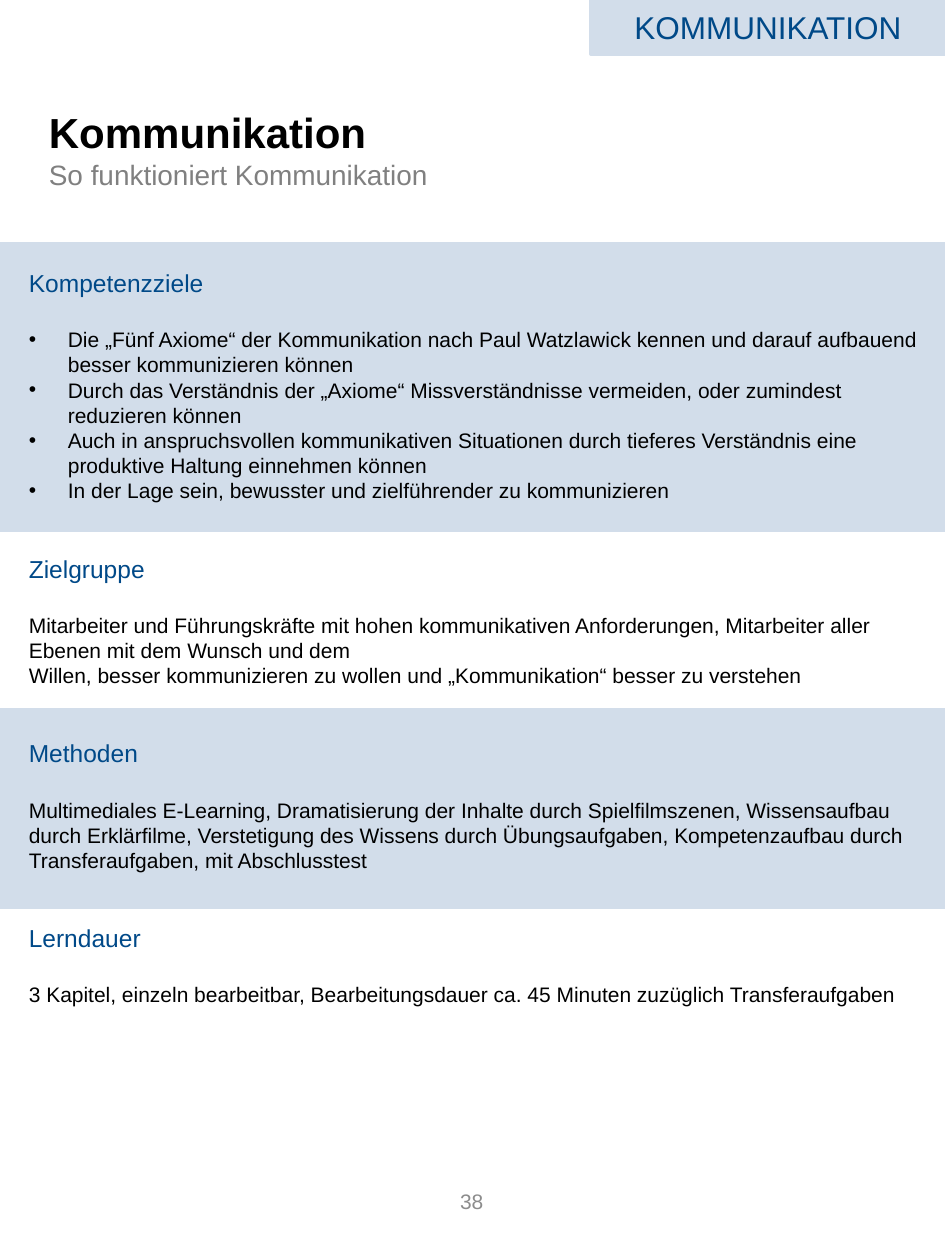
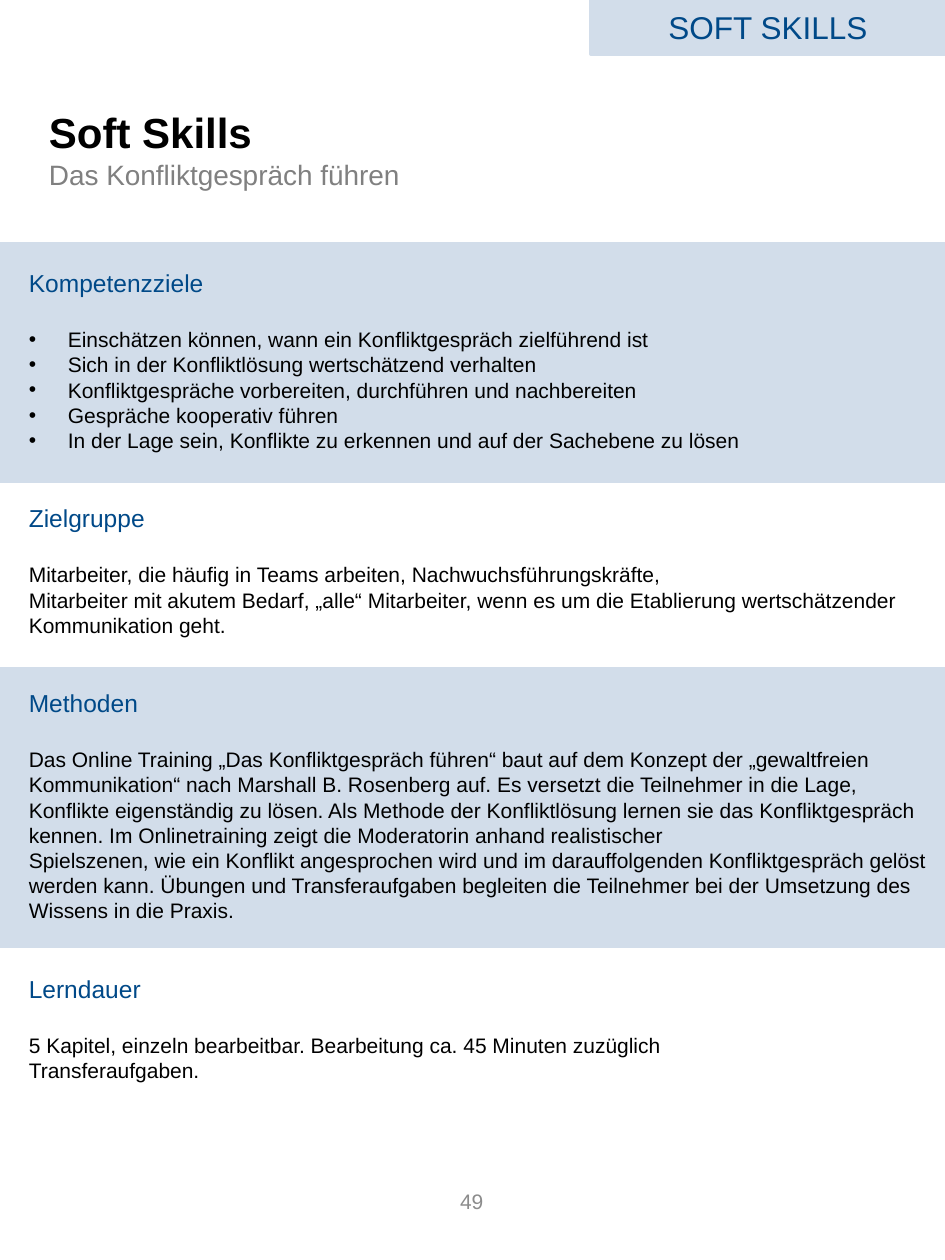
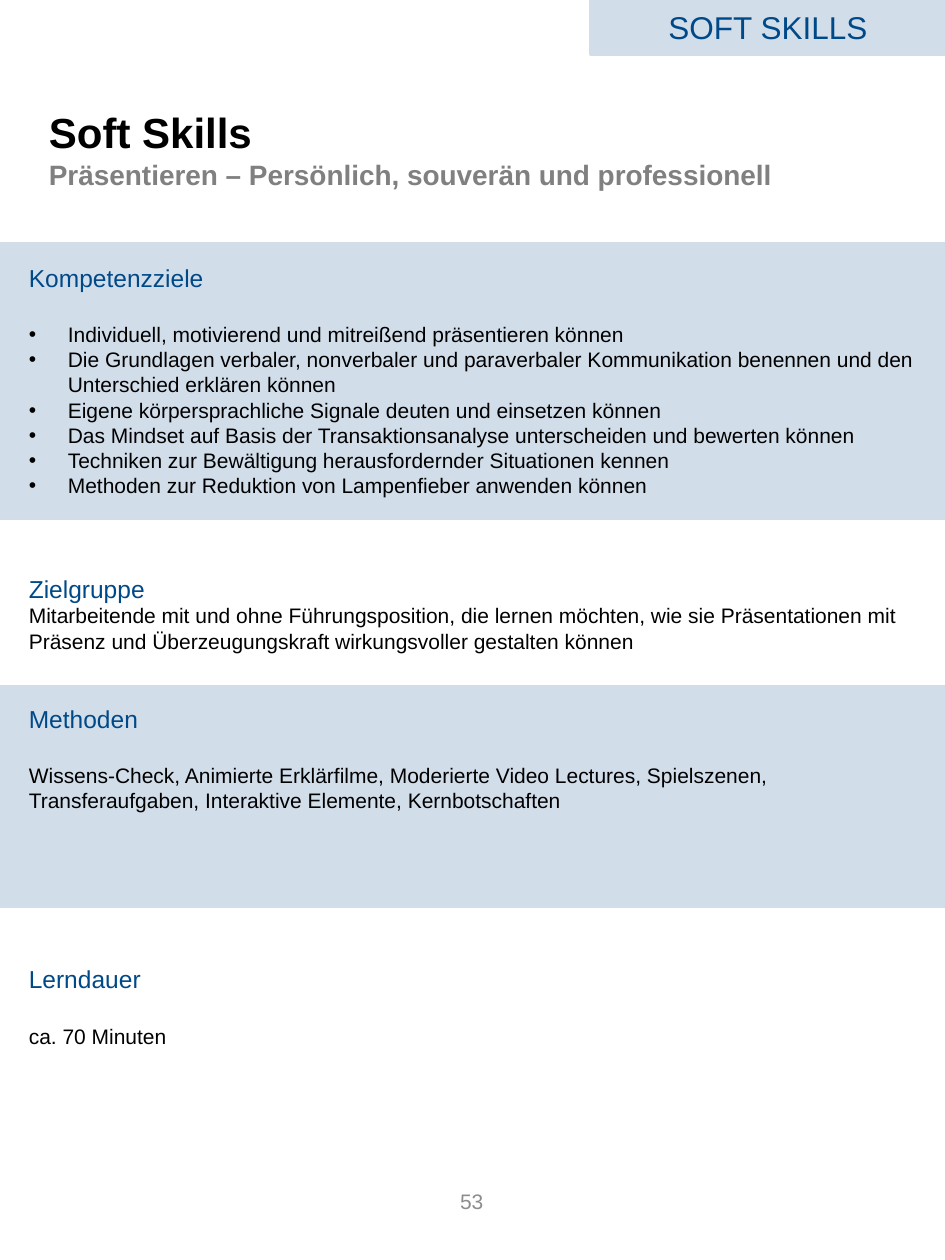
from dataclasses import dataclass

from lxml import etree
from pptx import Presentation
from pptx.dml.color import RGBColor
from pptx.enum.shapes import MSO_SHAPE
from pptx.enum.text import MSO_ANCHOR, PP_ALIGN
from pptx.oxml.ns import qn
from pptx.util import Pt

RECT = MSO_SHAPE.RECTANGLE
TOP, MIDDLE = MSO_ANCHOR.TOP, MSO_ANCHOR.MIDDLE
LEFT, CENTER = PP_ALIGN.LEFT, PP_ALIGN.CENTER


@dataclass(frozen=True)
class Theme:
    font: str = "Arial"
    band: str = "D2DDEA"
    blue: str = "004988"
    black: str = "000000"
    grey: str = "808080"
    pale: str = "8C8C8C"
    title: int = 24
    tab: int = 18
    sub: int = 16
    head: int = 14
    text: int = 12
    lead: float = 1.2


T = Theme()
WIDTH, HEIGHT = 540, 720
TAB = (337.7, 0, 202.3, 31)
TITLE = (20.9, 42.5, 493.9, 85)
NUMBER = (206.6, 667.4, 126, 38.2)
BODY_X, BODY_W = 9.4, 530.6
INSET = 3.6
HANG = 22.3
HEAD_GAP = 24 * T.lead
TEXT_GAP = T.head * T.lead
ROW = T.text * T.lead

# Bands and body are (top, height); a section is (heading, lines),
# optionally followed by its gap above and its gap below the heading.
PAGES = [
    {
        "tab": "KOMMUNIKATION",
        "title": "Kommunikation",
        "sub": "So funktioniert Kommunikation",
        "bold": False,
        "number": "38",
        "bands": [(405.4, 113), (139, 164.2)],
        "body": (115.9, 468),
        "goals": [
            "Die „Fünf Axiome“ der Kommunikation nach Paul Watzlawick kennen und darauf aufbauend besser kommunizieren können",
            "Durch das Verständnis der „Axiome“ Missverständnisse vermeiden, oder zumindest reduzieren können",
            "Auch in anspruchsvollen kommunikativen Situationen durch tieferes Verständnis eine produktive Haltung einnehmen können",
            "In der Lage sein, bewusster und zielführender zu kommunizieren",
        ],
        "parts": [
            ("Zielgruppe", [
                "Mitarbeiter und Führungskräfte mit hohen kommunikativen Anforderungen, Mitarbeiter aller Ebenen mit dem Wunsch und dem",
                "Willen, besser kommunizieren zu wollen und „Kommunikation“ besser zu verstehen",
            ]),
            ("Methoden", [
                "Multimediales E-Learning, Dramatisierung der Inhalte durch Spielfilmszenen, Wissensaufbau durch Erklärfilme, Verstetigung des Wissens durch Übungsaufgaben, Kompetenzaufbau durch Transferaufgaben, mit Abschlusstest",
            ]),
            ("Lerndauer", [
                "3 Kapitel, einzeln bearbeitbar, Bearbeitungsdauer ca. 45 Minuten zuzüglich Transferaufgaben",
            ]),
        ],
    },
    {
        "tab": "SOFT SKILLS",
        "title": "Soft Skills",
        "sub": "Das Konfliktgespräch führen",
        "bold": False,
        "number": "49",
        "bands": [(382.3, 158.4), (139, 136.1)],
        "body": (115.9, 511.2),
        "goals": [
            "Einschätzen können, wann ein Konfliktgespräch zielführend ist",
            "Sich in der Konfliktlösung wertschätzend verhalten",
            "Konfliktgespräche vorbereiten, durchführen und nachbereiten",
            "Gespräche kooperativ führen",
            "In der Lage sein, Konflikte zu erkennen und auf der Sachebene zu lösen",
        ],
        "parts": [
            ("Zielgruppe", [
                "Mitarbeiter, die häufig in Teams arbeiten, Nachwuchsführungskräfte,",
                "Mitarbeiter mit akutem Bedarf, „alle“ Mitarbeiter, wenn es um die Etablierung wertschätzender Kommunikation geht.",
            ]),
            ("Methoden", [
                "Das Online Training „Das Konfliktgespräch führen“ baut auf dem Konzept der „gewaltfreien Kommunikation“ nach Marshall B. Rosenberg auf. Es versetzt die Teilnehmer in die Lage, Konflikte eigenständig zu lösen. Als Methode der Konfliktlösung lernen sie das Konfliktgespräch kennen. Im Onlinetraining zeigt die Moderatorin anhand realistischer",
                "Spielszenen, wie ein Konflikt angesprochen wird und im darauffolgenden Konfliktgespräch gelöst werden kann. Übungen und Transferaufgaben begleiten die Teilnehmer bei der Umsetzung des Wissens in die Praxis.",
            ]),
            ("Lerndauer", [
                "5 Kapitel, einzeln bearbeitbar. Bearbeitung ca. 45 Minuten zuzüglich",
                "Transferaufgaben.",
            ]),
        ],
    },
    {
        "tab": "SOFT SKILLS",
        "title": "Soft Skills",
        "sub": "Präsentieren – Persönlich, souverän und professionell",
        "bold": True,
        "number": "53",
        "bands": [(392.4, 125.3), (139, 157)],
        "body": (113, 494.6),
        "goals": [
            "Individuell, motivierend und mitreißend präsentieren können",
            "Die Grundlagen verbaler, nonverbaler und paraverbaler Kommunikation benennen und den Unterschied erklären können",
            "Eigene körpersprachliche Signale deuten und einsetzen können",
            "Das Mindset auf Basis der Transaktionsanalyse unterscheiden und bewerten können",
            "Techniken zur Bewältigung herausfordernder Situationen kennen",
            "Methoden zur Reduktion von Lampenfieber anwenden können",
        ],
        "parts": [
            ("Zielgruppe", [
                "Mitarbeitende mit und ohne Führungsposition, die lernen möchten, wie sie Präsentationen mit Präsenz und Überzeugungskraft wirkungsvoller gestalten können",
            ], 3 * ROW, 0),
            ("Methoden", [
                "Wissens-Check, Animierte Erklärfilme, Moderierte Video Lectures, Spielszenen, Transferaufgaben, Interaktive Elemente, Kernbotschaften",
            ]),
            ("Lerndauer", ["ca. 70 Minuten"], HEAD_GAP + 4 * ROW),
        ],
    },
]


def color(code):
    return RGBColor.from_string(code)


def add_band(slide, box):
    band = slide.shapes.add_shape(RECT, *map(Pt, box))
    band.shadow.inherit = False
    band.fill.solid()
    band.fill.fore_color.rgb = color(T.band)
    band.line.color.rgb = color(T.band)
    band.line.width = Pt(2)
    return band


def add_box(slide, box, anchor=MIDDLE):
    frame = slide.shapes.add_textbox(*map(Pt, box)).text_frame
    frame.word_wrap = True
    frame.vertical_anchor = anchor
    return frame


def add_line(frame, text, size, ink, bold=False, align=LEFT, gap=0, bullet=False):
    """Fill the empty first paragraph, or append a new one."""
    first = frame.paragraphs[0]
    para = frame.add_paragraph() if first.runs else first
    para.add_run().text = text
    para.alignment = align
    para.line_spacing = Pt(size * T.lead)
    if gap:
        para.space_before = Pt(gap)
    if bullet:
        props = para._p.get_or_add_pPr()
        props.set("marL", str(Pt(HANG)))
        props.set("indent", str(-Pt(HANG)))
        etree.SubElement(props, qn("a:buFont")).set("typeface", T.font)
        etree.SubElement(props, qn("a:buChar")).set("char", "•")
    font = para.font
    font.name, font.size, font.bold = T.font, Pt(size), bold
    font.color.rgb = color(ink)


def add_part(frame, head, lines, above=HEAD_GAP, below=TEXT_GAP, bullet=False):
    add_line(frame, head, T.head, T.blue, gap=above)
    for i, line in enumerate(lines):
        add_line(frame, line, T.text, T.black, gap=0 if i else below, bullet=bullet)


def add_page(deck, page):
    slide = deck.slides.add_slide(deck.slide_layouts[6])
    for top, high in page["bands"]:
        add_band(slide, (0, top, WIDTH, high))

    add_line(add_box(slide, NUMBER), page["number"], T.text, T.pale, align=CENTER)
    title = add_box(slide, TITLE)
    add_line(title, page["title"], T.title, T.black, bold=True)
    add_line(title, page["sub"], T.sub, T.grey, bold=page["bold"])

    top, high = page["body"]
    body = add_box(slide, (BODY_X, top, BODY_W, high), TOP)
    body.margin_top = Pt(INSET + 2 * TEXT_GAP)
    add_part(body, "Kompetenzziele", page["goals"], above=0, bullet=True)
    for part in page["parts"]:
        add_part(body, *part)

    tab = add_band(slide, TAB).text_frame
    tab.vertical_anchor = MIDDLE
    add_line(tab, page["tab"], T.tab, T.blue, align=CENTER)


def main():
    deck = Presentation()
    deck.slide_width, deck.slide_height = Pt(WIDTH), Pt(HEIGHT)
    for page in PAGES:
        add_page(deck, page)
    deck.save("out.pptx")


if __name__ == "__main__":
    main()
